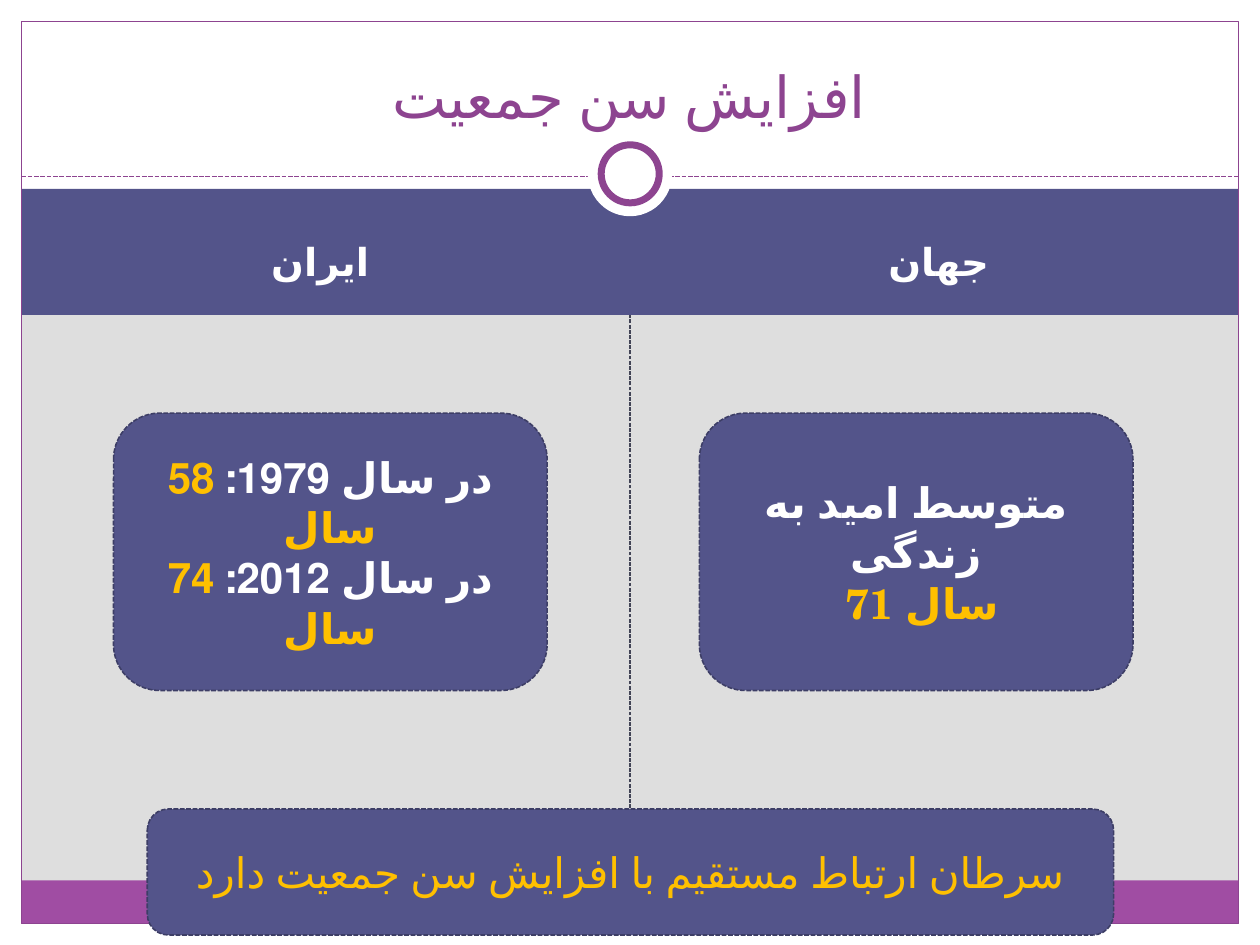
"""Build a slide comparing life expectancy in the world and in Iran."""
from lxml.etree import SubElement
from pptx import Presentation
from pptx.dml.color import RGBColor
from pptx.enum.dml import MSO_LINE_DASH_STYLE as Dash
from pptx.enum.lang import MSO_LANGUAGE_ID as Language
from pptx.enum.shapes import MSO_CONNECTOR, MSO_SHAPE as Shape
from pptx.enum.text import MSO_ANCHOR as Anchor, PP_ALIGN as Align
from pptx.oxml.ns import qn
from pptx.util import Cm, Pt

FONT = "TeX Gyre Schola"
COLORS = {
    "background": "DEDEDE",
    "white": "FFFFFF",
    "indigo": "53548A",
    "indigo_edge": "3D3E66",
    "divider": "424456",
    "purple": "A04DA3",
    "plum": "8D4490",
    "gold": "FFC000",
}


def add_box(kind, left, top, width, height, fill=None, line=None, weight=0.9, dash=None):
    shape = slide.shapes.add_shape(kind, Cm(left), Cm(top), Cm(width), Cm(height))
    shape.shadow.inherit = False
    if fill:
        shape.fill.solid()
        shape.fill.fore_color.rgb = RGBColor.from_string(COLORS[fill])
    else:
        shape.fill.background()
    if line:
        shape.line.color.rgb = RGBColor.from_string(COLORS[line])
        shape.line.width = Pt(weight)
        shape.line.dash_style = dash
    else:
        shape.line.fill.background()
    return shape


def write_text(shape, paragraphs, size, bold=False, rtl=False, anchor=Anchor.MIDDLE, before=0):
    text_frame = shape.text_frame
    text_frame.word_wrap = True
    text_frame.vertical_anchor = anchor
    text_frame.text = "\n".join("" for _ in paragraphs)
    for paragraph, runs in zip(text_frame.paragraphs, paragraphs):
        paragraph.alignment = Align.CENTER
        paragraph.space_before = Pt(before)
        if rtl:
            paragraph._p.get_or_add_pPr().set("rtl", "1")
        for text, color in runs:
            run = paragraph.add_run()
            run.text = text
            run.font.name = FONT
            run.font.language_id = Language.FARSI
            run.font.size = Pt(size)
            run.font.bold = bold
            run.font.color.rgb = RGBColor.from_string(COLORS[color])


presentation = Presentation()
presentation.slide_width = Cm(25.4)
presentation.slide_height = Cm(19.05)
slide = presentation.slides.add_slide(presentation.slide_layouts[6])
slide.background.fill.solid()
slide.background.fill.fore_color.rgb = RGBColor.from_string(COLORS["background"])

bands = [
    (0, 0, 25.4, 4.01, "white"),
    (0, 18.62, 25.4, 0.43, "white"),
    (0, 0, 0.43, 19.05, "white"),
    (24.97, 0, 0.43, 19.05, "white"),
    (0.43, 3.81, 24.54, 2.54, "indigo"),
    (0.43, 17.75, 24.54, 0.87, "purple"),
]
for left, top, width, height, color in bands:
    add_box(Shape.RECTANGLE, left, top, width, height, color)

rules = [
    (12.7, 17.75, 12.7, 6.35, "divider", 0.75),
    (0.43, 3.56, 24.97, 3.56, "plum", 0.9),
]
for x1, y1, x2, y2, color, weight in rules:
    rule = slide.shapes.add_connector(MSO_CONNECTOR.STRAIGHT, Cm(x1), Cm(y1), Cm(x2), Cm(y2))
    rule.line.color.rgb = RGBColor.from_string(COLORS[color])
    rule.line.width = Pt(weight)
    rule.line.dash_style = Dash.SQUARE_DOT
    SubElement(rule._element.spPr, qn("a:effectLst"))

add_box(Shape.RECTANGLE, 0.43, 0.43, 24.54, 18.19, line="plum", weight=0.75)
add_box(Shape.OVAL, 11.85, 2.66, 1.7, 1.7, "white")
add_box(Shape.OVAL, 12.12, 2.92, 1.17, 1.17, "white", "plum", 4)

for left, heading in [(0.84, "ایران"), (13.31, "جهان")]:
    heading_box = slide.shapes.add_textbox(Cm(left), Cm(4.24), Cm(11.23), Cm(2.03))
    write_text(heading_box, [[(heading, "white")]], 22, bold=True, before=4.4)

title = slide.shapes.add_textbox(Cm(0.84), Cm(0.64), Cm(23.7), Cm(2.11))
write_text(title, [[("افزایش سن جمعیت", "plum")]], 33, anchor=Anchor.BOTTOM)

conclusion = [[("سرطان ارتباط مستقیم با افزایش سن جمعیت دارد", "gold")]]
world = [[("متوسط امید به زندگی", "white")], [(" ", "white"), ("71 سال", "gold")]]
iran = [
    [(f"در سال {year}: ", "white"), (f"{age} سال", "gold")]
    for year, age in [(1979, 58), (2012, 74)]
]
cards = [
    (2.97, 16.31, 19.48, 2.54, conclusion, False, True),
    (14.1, 8.33, 8.74, 5.59, world, True, False),
    (2.29, 8.33, 8.74, 5.59, iran, True, True),
]
for left, top, width, height, paragraphs, bold, rtl in cards:
    card = add_box(Shape.ROUNDED_RECTANGLE, left, top, width, height,
                   "indigo", "indigo_edge", dash=Dash.SQUARE_DOT)
    write_text(card, paragraphs, 24, bold, rtl)

presentation.save("out.pptx")
